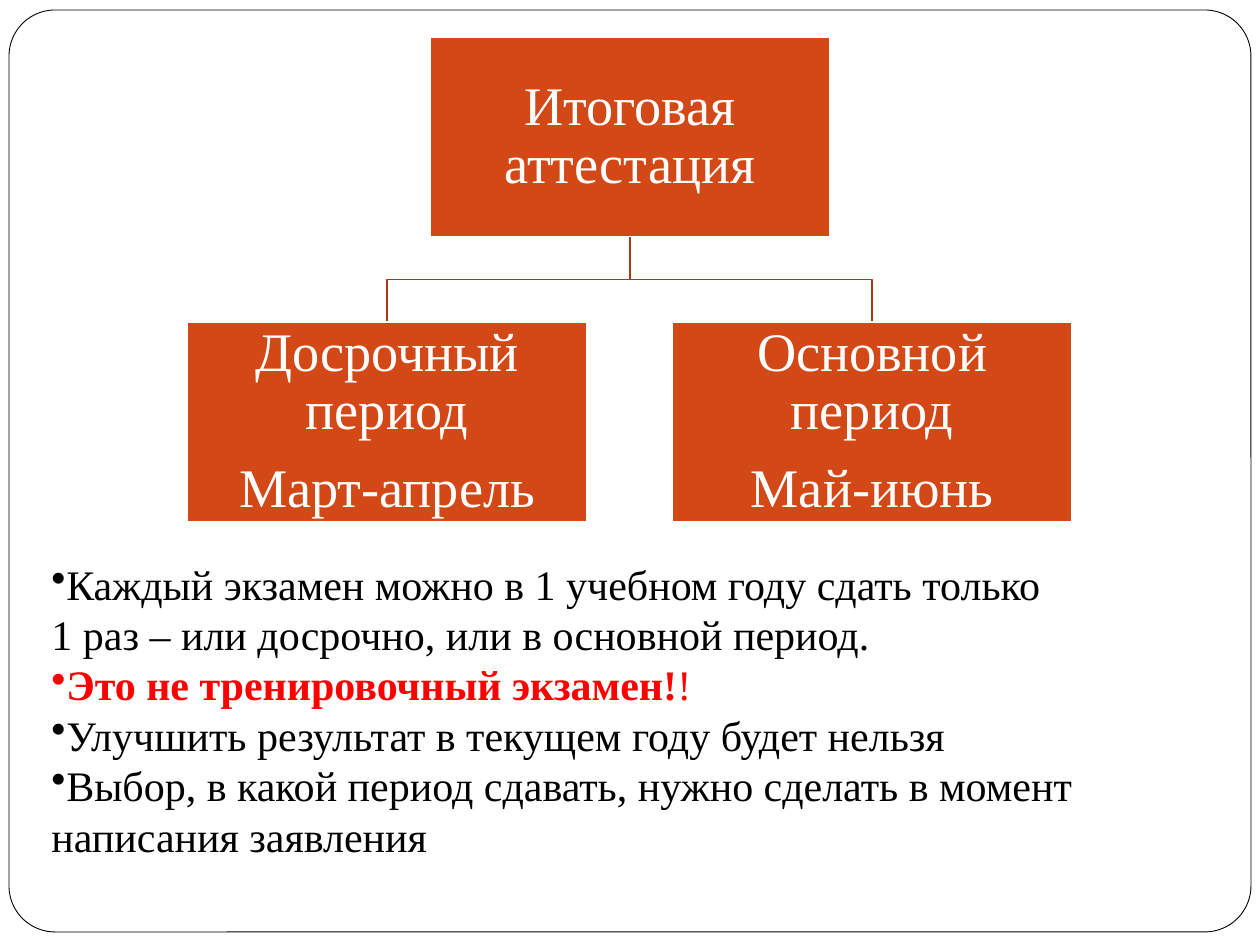
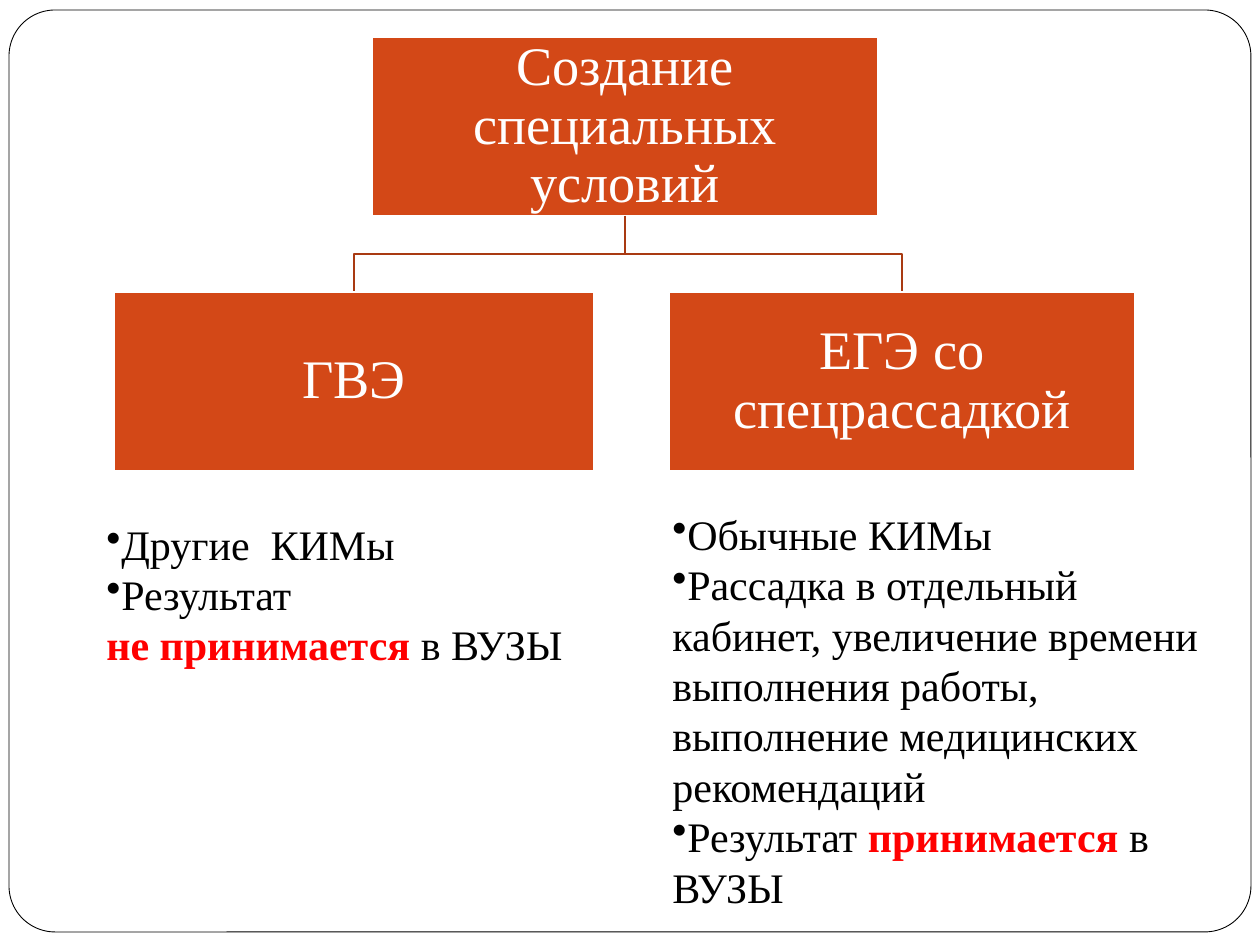
from lxml.etree import SubElement
from pptx import Presentation
from pptx.dml.color import RGBColor
from pptx.enum.shapes import MSO_SHAPE
from pptx.enum.text import MSO_ANCHOR, MSO_AUTO_SIZE, PP_ALIGN
from pptx.oxml.ns import qn
from pptx.util import Emu, Pt

FONT = "Times New Roman"
WHITE, BLACK, RED = "FFFFFF", "000000", "FF0000"
ORANGE, RUST = "D34817", "A93A12"


def px(*values):
    return [Emu(round(v * 914400 / 126)) for v in values]


def write(tf, paragraphs, size=24, color=BLACK, align=PP_ALIGN.LEFT, spacing=None, after=0, bullet=None):
    tf.word_wrap = True
    for i, runs in enumerate(paragraphs):
        p = tf.paragraphs[0] if i == 0 else tf.add_paragraph()
        p.alignment, p.line_spacing, p.space_after = align, spacing, Pt(after)
        if bullet:
            SubElement(p._p.get_or_add_pPr(), qn("a:buChar")).set("char", bullet)
        for text, *style in [(runs,)] if isinstance(runs, str) else runs:
            run_color, bold = style or (color, False)
            for j, part in enumerate(text.split("\n")):
                if j:
                    p.add_line_break()
                if part:
                    r = p.add_run()
                    r.text = part
                    r.font.name, r.font.size, r.font.bold = FONT, Pt(size), bold
                    r.font.color.rgb = RGBColor.from_string(run_color)


slides = [
    {
        "root": ((430, 37, 400, 200), ["Итоговая аттестация"]),
        "branches": [
            ((187, 322, 400, 200), ["Досрочный период", "Март-апрель"]),
            ((672, 322, 400, 200), ["Основной период", "Май-июнь"]),
        ],
        "notes": [
            ((39, 552, 1181, 318), [
                "Каждый экзамен можно в 1 учебном году сдать только \n"
                "1 раз – или досрочно, или в основной период.",
                [("Это не тренировочный экзамен!", RED, True), ("!", RED, False)],
                "Улучшить результат в текущем году будет нельзя",
                "Выбор, в какой период сдавать, нужно сделать в момент написания заявления",
            ]),
        ],
    },
    {
        "root": ((372, 37, 506, 179), ["Создание специальных условий"]),
        "branches": [
            ((114, 292, 480, 179), ["ГВЭ"]),
            ((669, 292, 466, 179), ["ЕГЭ со спецрассадкой"]),
        ],
        "notes": [
            ((94, 512, 536, 165), [
                "Другие  КИМы",
                [("Результат \n",), ("не принимается ", RED, True), ("в ВУЗЫ",)],
            ]),
            ((660, 502, 576, 420), [
                "Обычные КИМы",
                "Рассадка в отдельный кабинет, увеличение времени выполнения работы, "
                "выполнение медицинских рекомендаций",
                [("Результат ",), ("принимается ", RED, True), ("в ВУЗЫ",)],
            ]),
        ],
    },
]

prs = Presentation()
prs.slide_width, prs.slide_height = px(1260, 945)
layout = prs.slide_layouts[5]

for number, content in enumerate(slides):
    slide = prs.slides.add_slide(layout)

    if number == 0:
        frame = slide.shapes.add_shape(MSO_SHAPE.ROUNDED_RECTANGLE, *px(9, 10, 1242, 922))
        frame.adjustments[0] = 0.05
        frame.shadow.inherit = False
        frame.fill.solid()
        frame.fill.fore_color.rgb = RGBColor.from_string(WHITE)
        frame.line.color.rgb = RGBColor.from_string(BLACK)
        frame.line.width = Pt(0.5)
        layout.shapes.element.insert(2, frame.element)

    (left, top, width, height), _ = content["root"]
    start_x, start_y = left + width / 2, top + height
    for (x, y, w, h), _ in content["branches"]:
        end_x, mid_y = x + w / 2, (start_y + y) / 2
        builder = slide.shapes.build_freeform(*px(start_x, start_y))
        corners = [(start_x, mid_y), (end_x, mid_y), (end_x, y)]
        builder.add_line_segments([px(*corner) for corner in corners], close=False)
        sp = builder.convert_to_shape()
        sp.shadow.inherit = False
        sp.fill.background()
        sp.line.color.rgb = RGBColor.from_string(RUST)
        sp.line.width = Pt(1)

    for i, (place, lines) in enumerate([content["root"], *content["branches"]]):
        if i == 0:
            sp = slide.shapes.title
            sp.left, sp.top, sp.width, sp.height = px(*place)
        else:
            sp = slide.shapes.add_shape(MSO_SHAPE.RECTANGLE, *px(*place))
            sp.shadow.inherit = False
        sp.fill.solid()
        sp.fill.fore_color.rgb = RGBColor.from_string(ORANGE)
        sp.line.color.rgb = RGBColor.from_string(WHITE)
        sp.line.width = Pt(1)
        tf = sp.text_frame
        tf.auto_size = MSO_AUTO_SIZE.NONE
        tf.vertical_anchor = MSO_ANCHOR.MIDDLE
        tf.margin_left, tf.margin_top, tf.margin_right, tf.margin_bottom = px(3, 3, 3, 3)
        write(tf, lines, size=31, color=WHITE, align=PP_ALIGN.CENTER, spacing=0.9, after=11)

    for place, lines in content["notes"]:
        tf = slide.shapes.add_textbox(*px(*place)).text_frame
        tf.auto_size = MSO_AUTO_SIZE.SHAPE_TO_FIT_TEXT
        write(tf, lines, bullet="•")

prs.save("out.pptx")
